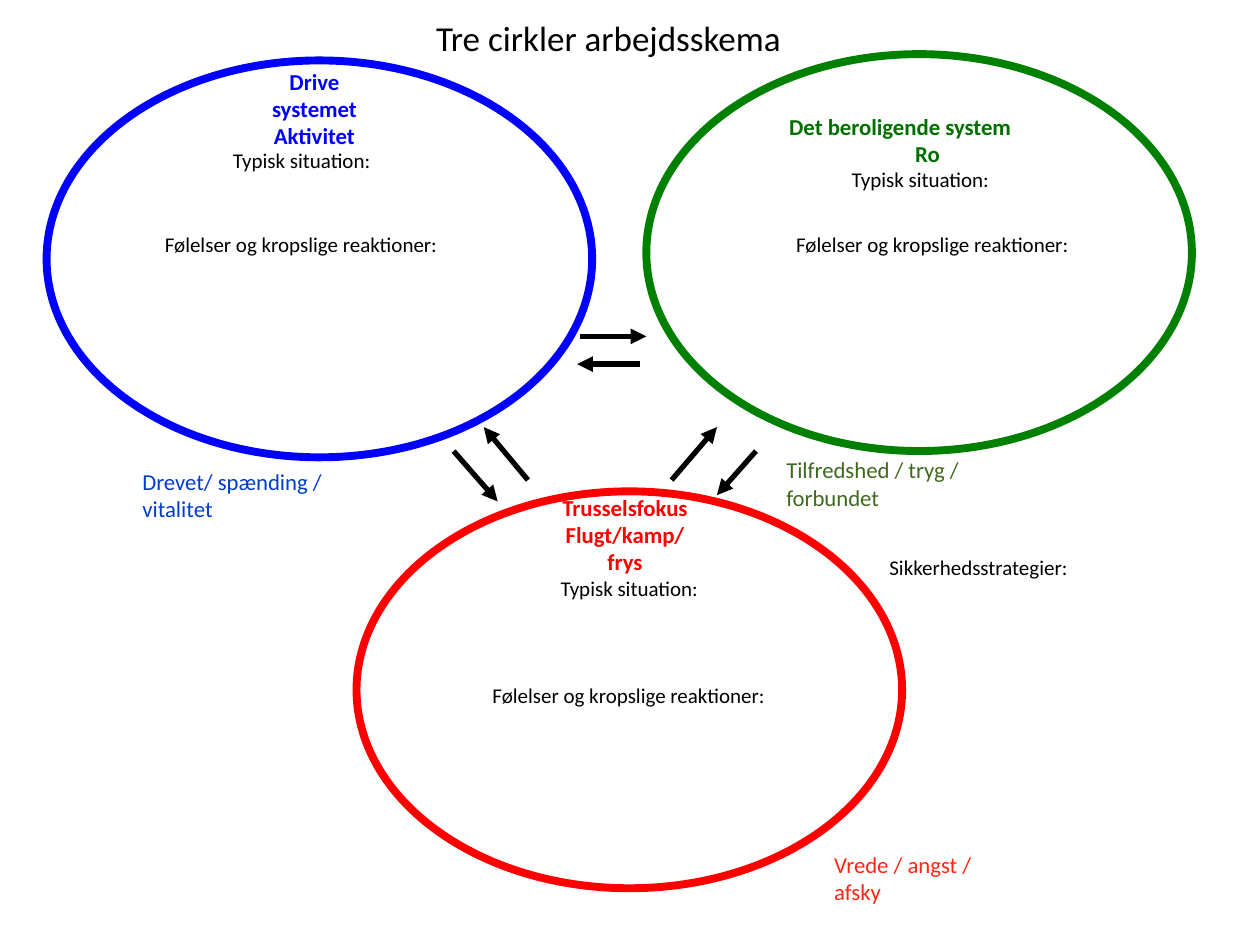
import dataclasses
import typing

import lxml.etree
import pptx
import pptx.dml.color
import pptx.enum.shapes
import pptx.enum.text
import pptx.oxml.ns
import pptx.util

Inches = pptx.util.Inches
Pt = pptx.util.Pt
qn = pptx.oxml.ns.qn
Align = pptx.enum.text.PP_ALIGN
Anchor = pptx.enum.text.MSO_ANCHOR


@dataclasses.dataclass(frozen=True)
class Theme:
    font: str = "Calibri"
    title: int = 20
    head: int = 13
    label: int = 12
    ring: float = 4.5
    arrow: int = 3
    black: str = "000000"
    white: str = "FFFFFF"
    blue: str = "0000FF"
    green: str = "008000"
    red: str = "FF0000"
    calm: str = "006F00"
    moss: str = "3F691E"
    navy: str = "003DCC"
    flame: str = "FF2712"


class Box(typing.NamedTuple):
    left: float
    top: float
    width: float
    height: float


class Label(typing.NamedTuple):
    box: Box
    lines: tuple[str, ...]
    size: int
    color: str
    bold: bool = False
    align: typing.Any = Align.LEFT
    anchor: typing.Any = Anchor.TOP
    inset: tuple[float, ...] = (0.1, 0.05, 0.1, 0.05)
    wrap: bool = True


class Ring(typing.NamedTuple):
    box: Box
    color: str


class Arrow(typing.NamedTuple):
    start: tuple[float, float]
    end: tuple[float, float]


THEME = Theme()
SITE = "Typisk situation:"
FEEL = "Følelser og kropslige reaktioner:"
SLIM = (0.04, 0, 0.3, 0)
INNER = (0.13, 0.04, 0.19, 0.04)

TITLE = Label(Box(0.62, -0.58, 8.5, 1.75), ("Tre cirkler arbejdsskema",),
              THEME.title, THEME.black, False, Align.CENTER, Anchor.MIDDLE,
              (0.03, 0.03, 0.11, 0.03))

DRIVE = Ring(Box(0.37, 0.48, 4.33, 3.15), THEME.blue)
CALM = Ring(Box(5.13, 0.43, 4.33, 3.15), THEME.green)
THREAT = Ring(Box(2.83, 3.9, 4.33, 3.15), THEME.red)

HEADS = [
    Label(Box(left, top, width, 0.52), lines, THEME.head, color, True,
          Align.CENTER, Anchor.MIDDLE, INNER)
    for left, top, width, lines, color in (
        (1.88, 0.6, 1.29, ("Drive systemet", "Aktivitet"), THEME.blue),
        (4.29, 3.98, 1.4, ("Trusselsfokus", "Flugt/kamp/frys"), THEME.red),
    )
]

MOODS = [
    Label(Box(left, top, width, 0.22), (text,), THEME.head, color, inset=SLIM)
    for left, top, width, text, color in (
        (6.2, 3.62, 2.22, "Tilfredshed / tryg / forbundet", THEME.moss),
        (1.09, 3.71, 2.1, "Drevet/ spænding / vitalitet", THEME.navy),
        (6.58, 6.75, 1.57, "Vrede / angst / afsky", THEME.flame),
    )
]

FIELDS = [
    Label(Box(left, top, width, 0.3), (text,), THEME.label, THEME.black, wrap=False)
    for text, width, spots in (
        (SITE, 1.31, ((1.75, 1.12), (4.35, 4.52), (6.66, 1.27))),
        (FEEL, 2.39, ((1.21, 1.79), (6.22, 1.79), (3.81, 5.37))),
        ("Sikkerhedsstrategier:", 1.65, ((6.96, 4.35),)),
    )
    for left, top in spots
]

ARROWS = (
    Arrow((4.6, 2.67), (5.13, 2.67)),
    Arrow((5.08, 2.89), (4.58, 2.89)),
    Arrow((6, 3.58), (5.69, 3.93)),
    Arrow((5.33, 3.81), (5.69, 3.39)),
    Arrow((4.19, 3.81), (3.84, 3.39)),
    Arrow((3.6, 3.58), (3.95, 3.98)),
)


def apply(target: typing.Any, values: dict[str, typing.Any]) -> None:
    for name, value in values.items():
        setattr(target, name, value)


def tint(code: str) -> pptx.dml.color.RGBColor:
    return pptx.dml.color.RGBColor.from_string(code)


def write(frame: typing.Any, label: Label) -> None:
    left, top, right, low = map(Inches, label.inset)
    apply(frame, {
        "word_wrap": label.wrap, "vertical_anchor": label.anchor,
        "margin_left": left, "margin_top": top,
        "margin_right": right, "margin_bottom": low,
    })
    for index, text in enumerate(label.lines):
        para = frame.paragraphs[0] if index == 0 else frame.add_paragraph()
        para.alignment = label.align
        run = para.add_run()
        run.text = text
        apply(run.font, {"name": THEME.font, "size": Pt(label.size), "bold": label.bold})
        run.font.color.rgb = tint(label.color)


def draw_label(slide: typing.Any, label: Label) -> None:
    shape = slide.shapes.add_textbox(*map(Inches, label.box))
    write(shape.text_frame, label)


def draw_ring(slide: typing.Any, ring: Ring) -> typing.Any:
    shape = slide.shapes.add_shape(
        pptx.enum.shapes.MSO_SHAPE.OVAL, *map(Inches, ring.box))
    shape.shadow.inherit = False
    shape.fill.solid()
    shape.fill.fore_color.rgb = tint(THEME.white)
    shape.line.color.rgb = tint(ring.color)
    shape.line.width = Pt(THEME.ring)
    return shape


def draw_arrow(slide: typing.Any, arrow: Arrow) -> None:
    line = slide.shapes.add_connector(
        pptx.enum.shapes.MSO_CONNECTOR.STRAIGHT,
        *map(Inches, arrow.start + arrow.end))
    line.line.color.rgb = tint(THEME.black)
    line.line.width = Pt(THEME.arrow)
    props = line._element.spPr
    lxml.etree.SubElement(props.find(qn("a:ln")), qn("a:tailEnd"), type="triangle")
    lxml.etree.SubElement(props, qn("a:effectLst"))


def fill_calm(shape: typing.Any) -> None:
    write(shape.text_frame, Label(
        CALM.box, ("Det beroligende system", "Ro"), THEME.head, THEME.calm,
        True, inset=(0, 0, 0, 0)))
    for para, indent in zip(shape.text_frame.paragraphs, (0.5, 1.5)):
        para._p.get_or_add_pPr().set("marL", str(Inches(indent)))


def main() -> None:
    deck = pptx.Presentation()
    apply(deck, {"slide_width": Inches(10), "slide_height": Inches(7.5)})
    slide = deck.slides.add_slide(deck.slide_layouts[6])
    draw_label(slide, TITLE)
    draw_ring(slide, DRIVE)
    fill_calm(draw_ring(slide, CALM))
    draw_ring(slide, THREAT)
    for arrow in ARROWS:
        draw_arrow(slide, arrow)
    for label in HEADS + MOODS + FIELDS:
        draw_label(slide, label)
    deck.save("out.pptx")


if __name__ == "__main__":
    main()
